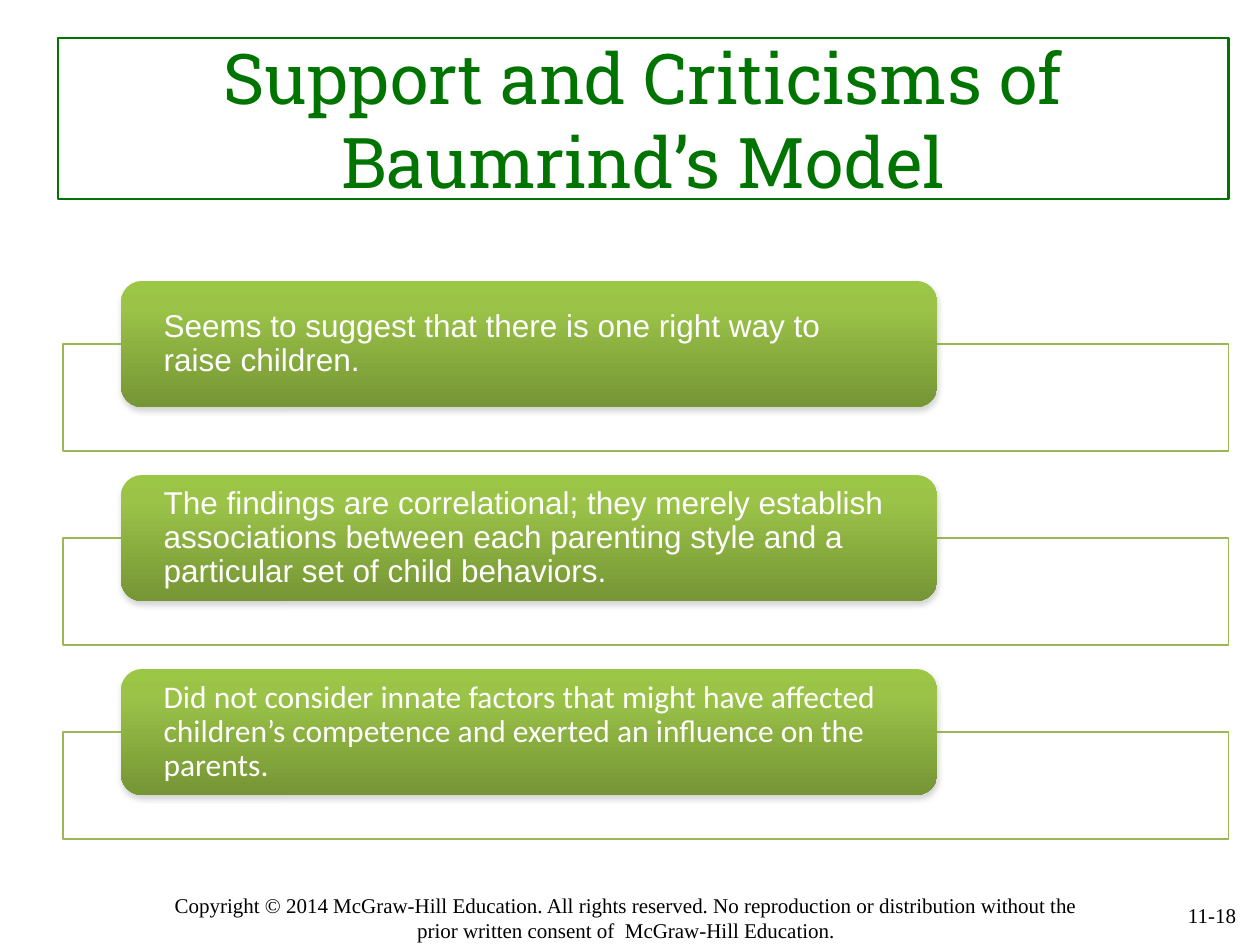
from copy import deepcopy

from lxml.etree import SubElement
from pptx import Presentation
from pptx.dml.color import RGBColor
from pptx.enum.shapes import MSO_SHAPE
from pptx.enum.text import MSO_ANCHOR, MSO_AUTO_SIZE, PP_ALIGN
from pptx.oxml.ns import qn
from pptx.util import Inches, Pt

WHITE = RGBColor(0xFF, 0xFF, 0xFF)
BLACK = RGBColor(0x00, 0x00, 0x00)
TITLE_GREEN = RGBColor(0x00, 0x74, 0x00)
PANEL_GREEN = RGBColor(0x98, 0xB9, 0x55)
GRADIENT = [
    (0, RGBColor(0x9C, 0xC7, 0x46)),
    (0.2, RGBColor(0x9B, 0xC3, 0x48)),
    (1, RGBColor(0x76, 0x95, 0x35)),
]
ROW_TOP, ROW_PITCH = 2.23, 1.54
PANEL_OFFSET = 0.5

POINTS = [
    ("Seems to suggest that there is one right way to raise children.", "Arial"),
    ("The findings are correlational; they merely establish associations "
     "between each parenting style and a particular set of child behaviors.", "Arial"),
    ("Did not consider innate factors that might have affected children’s "
     "competence and exerted an influence on the parents.", "Calibri"),
]
COPYRIGHT = ("Copyright © 2014 McGraw-Hill Education. All rights reserved. "
             "No reproduction or distribution without the prior written "
             "consent of  McGraw-Hill Education.")


def box(left, top, width, height):
    return [Inches(length) for length in (left, top, width, height)]


def write(shape, text, font_name, size, color, alignment, anchor, margins=(0.1, 0.05)):
    frame = shape.text_frame
    horizontal, vertical = (Inches(margin) for margin in margins)
    frame_format = {
        "word_wrap": True, "auto_size": MSO_AUTO_SIZE.NONE, "vertical_anchor": anchor,
        "margin_left": horizontal, "margin_right": horizontal,
        "margin_top": vertical, "margin_bottom": vertical,
    }
    for name, value in frame_format.items():
        setattr(frame, name, value)
    paragraph = frame.paragraphs[0]
    paragraph.alignment = alignment
    run = paragraph.add_run()
    run.text = text
    for name, value in {"name": font_name, "size": Pt(size), "bold": False}.items():
        setattr(run.font, name, value)
    run.font.color.rgb = color
    return paragraph


presentation = Presentation()
presentation.slide_width, presentation.slide_height = Inches(10), Inches(7.5)
slide = presentation.slides.add_slide(presentation.slide_layouts[5])
shapes = slide.shapes

copyright_box = shapes.add_textbox(*box(1.27, 7.08, 7.4, 0.4))
write(copyright_box, COPYRIGHT, "Times New Roman", 12, BLACK,
      PP_ALIGN.CENTER, MSO_ANCHOR.TOP, (0, 0))

page_number = shapes.add_textbox(*box(7.58, 7.06, 2.33, 0.4))
write(page_number, "11-18", "Times New Roman", 12, BLACK,
      PP_ALIGN.RIGHT, MSO_ANCHOR.MIDDLE)

title = shapes.title
title.left, title.top, title.width, title.height = box(0.46, 0.3, 9.29, 1.28)
title.line.color.rgb = TITLE_GREEN
title.line.width = Pt(1.25)
write(title, "Support and Criticisms of Baumrind’s Model", "Roboto Slab", 40,
      TITLE_GREEN, PP_ALIGN.CENTER, MSO_ANCHOR.MIDDLE)

for row, (text, font_name) in enumerate(POINTS):
    top = ROW_TOP + row * ROW_PITCH

    panel = shapes.add_shape(MSO_SHAPE.RECTANGLE, *box(0.5, top + PANEL_OFFSET, 9.25, 0.85))
    panel.shadow.inherit = False
    panel.fill.solid()
    panel.fill.fore_color.rgb = WHITE
    panel_color = panel._element.spPr.find(qn("a:solidFill")).find(qn("a:srgbClr"))
    SubElement(panel_color, qn("a:alpha"), val="90000")
    panel.line.color.rgb = PANEL_GREEN
    panel.line.width = Pt(0.75)

    card = shapes.add_shape(MSO_SHAPE.ROUNDED_RECTANGLE, *box(0.96, top, 6.48, 1))
    card.line.fill.background()
    card.fill.gradient()
    card.fill.gradient_angle = 270
    properties = card._element.spPr
    stop_list = properties.find(qn("a:gradFill")).find(qn("a:gsLst"))
    stop_list.append(deepcopy(stop_list[-1]))
    for stop, (position, color) in zip(card.fill.gradient_stops, GRADIENT):
        stop.position = position
        stop.color.rgb = color

    card.shadow.inherit = False
    shadow = SubElement(properties.find(qn("a:effectLst")), qn("a:outerShdw"),
                        blurRad=str(Pt(3.1)), dist=str(Pt(1.8)), dir="5400000",
                        rotWithShape="0")
    shadow_color = SubElement(shadow, qn("a:srgbClr"), val="808080")
    SubElement(shadow_color, qn("a:alpha"), val="35000")

    paragraph = write(card, text, font_name, 18, WHITE,
                      PP_ALIGN.LEFT, MSO_ANCHOR.MIDDLE, (0.29, 0.05))
    paragraph.line_spacing = 0.9

presentation.save("out.pptx")
